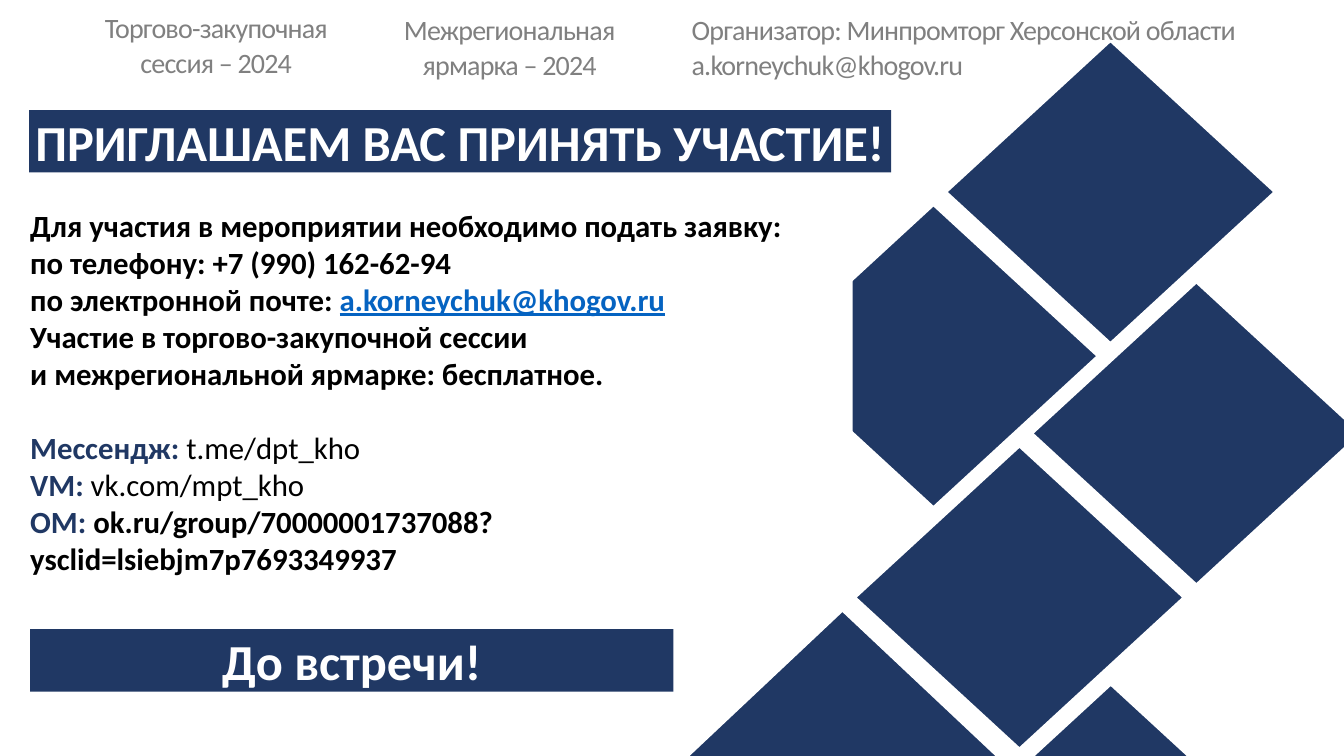
from lxml import etree
from pptx import Presentation
from pptx.dml.color import RGBColor
from pptx.enum.shapes import MSO_SHAPE
from pptx.enum.text import MSO_ANCHOR, MSO_AUTO_SIZE, PP_ALIGN
from pptx.oxml.ns import qn
from pptx.util import Pt

NAVY = RGBColor(0x20, 0x38, 0x64)
WHITE = RGBColor(0xFF, 0xFF, 0xFF)
BLACK = RGBColor(0, 0, 0)
GRAY = RGBColor(0x80, 0x80, 0x80)
LINK = RGBColor(0x05, 0x63, 0xC1)
LEFT, CENTER = PP_ALIGN.LEFT, PP_ALIGN.CENTER
TOP, NO_FIT = MSO_ANCHOR.TOP, MSO_AUTO_SIZE.NONE
RECT = MSO_SHAPE.RECTANGLE
FONT = "Calibri"

# Content
TITLE = "ПРИГЛАШАЕМ ВАС ПРИНЯТЬ УЧАСТИЕ!"
FAREWELL = "До встречи!"
HEADERS = [  # left, top, width, alignment, lines
    (66.2, 4, 176.4, CENTER, ["Торгово-закупочная", "сессия – 2024"]),
    (275.8, 5.3, 176.4, CENTER, ["Межрегиональная", "ярмарка – 2024"]),
    (487, 5.3, 408.2, LEFT,
     ["Организатор: Минпромторг Херсонской области", "a.korneychuk@khogov.ru"]),
]
# Each paragraph: space before, runs of (text, colour, bold, underline)
BODY = [
    (0, [("Для участия в мероприятии необходимо подать заявку:", BLACK, True, False)]),
    (0, [("по телефону: +7 (990) 162-62-94", BLACK, True, False)]),
    (0, [("по электронной почте: ", BLACK, True, False),
         ("a.korneychuk@khogov.ru", LINK, True, True)]),
    (0, [("Участие в торгово-закупочной сессии", BLACK, True, False)]),
    (0, [("и межрегиональной ярмарке: бесплатное.", BLACK, True, False)]),
    (26.5, [("Мессендж: ", NAVY, True, False), ("t.me/dpt_kho", BLACK, False, False)]),
    (0, [("VM: ", NAVY, True, False), ("vk.com/mpt_kho", BLACK, False, False)]),
    (0, [("OM: ", NAVY, True, False),
         ("ok.ru/group/70000001737088?ysclid=lsiebjm7p7693349937", BLACK, True, False)]),
]

# Diamond rows: centre of the first diamond, count; each next one is down-left
DIAMOND_ROWS = [(793.2, 137.2, 2), (854.6, 309.6, 3), (793.4, 596.9, 1)]
STEP_X, STEP_Y = -126.4, 117.2
HALF_W, HALF_H = 119, 109.5
CUT_Y = 546.5


def add_run(p, text, size, color, bold=False, underline=False):
    r = p.add_run()
    r.text = text
    r.font.name, r.font.size = FONT, Pt(size)
    r.font.bold, r.font.underline = bold, underline
    r.font.color.rgb = color
    return r


def set_frame(sp, left, top, width, height, fill):
    sp.left, sp.top, sp.width, sp.height = Pt(left), Pt(top), Pt(width), Pt(height)
    sp.fill.solid()
    sp.fill.fore_color.rgb = fill
    tf = sp.text_frame
    tf.word_wrap, tf.auto_size, tf.vertical_anchor = True, NO_FIT, TOP
    tf.margin_left = tf.margin_right = tf.margin_bottom = 0
    tf.margin_top = Pt(1)
    return tf


def add_banner(sp, left, top, width, text):
    tf = set_frame(sp, left, top, width, 44.6, NAVY)
    p = tf.paragraphs[0]
    p.alignment = CENTER
    add_run(p, text, 36, WHITE, bold=True)


def add_diamond(shapes, cx, cy):
    top = cy - HALF_H
    if cy + HALF_H > CUT_Y:  # only the upper part is on the slide
        depth = min(HALF_H, CUT_Y - top)
        half = HALF_W * depth / HALF_H
        points = [(cx, top), (cx + half, CUT_Y), (cx - half, CUT_Y)]
    else:
        points = [(cx, top), (cx + HALF_W, cy), (cx, cy + HALF_H), (cx - HALF_W, cy)]
    points = [(Pt(x), Pt(y)) for x, y in points]
    fb = shapes.build_freeform(*points[0])
    fb.add_line_segments(points[1:], close=True)
    sp = fb.convert_to_shape()
    sp.shadow.inherit = False
    sp.fill.solid()
    sp.fill.fore_color.rgb = NAVY
    sp.line.color.rgb = WHITE
    sp.line.width = Pt(3.92)


prs = Presentation()
prs.slide_width, prs.slide_height = Pt(960), Pt(540)
s = prs.slides.add_slide(prs.slide_layouts[1])
title, body = s.placeholders

# Diamonds, kept behind the text
for x, y, count in DIAMOND_ROWS:
    for i in range(count):
        add_diamond(s.shapes, x + i * STEP_X, y + i * STEP_Y)
for sp in (title, body):
    sp._element.getparent().append(sp._element)

# Title and farewell banners
add_banner(title, 20.9, 78.6, 615.6, TITLE)
farewell = s.shapes.add_shape(RECT, 0, 0, 0, 0)
farewell.shadow.inherit = False
farewell.line.fill.background()
add_banner(farewell, 21.6, 449.4, 459.4, FAREWELL)

# Body text
tf = set_frame(body, 21.6, 146.9, 587.5, 267.8, WHITE)
for i, (before, runs) in enumerate(BODY):
    p = tf.add_paragraph() if i else tf.paragraphs[0]
    pPr = p._p.get_or_add_pPr()
    pPr.set("marL", "0")
    pPr.set("indent", "0")
    etree.SubElement(pPr, qn("a:buNone"))
    p.alignment, p.line_spacing = LEFT, 1.0
    p.space_before = Pt(before)
    for text, color, bold, underline in runs:
        add_run(p, text, 22, color, bold, underline)

# Header captions
for left, top, width, align, lines in HEADERS:
    tf = s.shapes.add_textbox(Pt(left), Pt(top), Pt(width), Pt(56.9)).text_frame
    tf.word_wrap = True
    for i, line in enumerate(lines):
        p = tf.add_paragraph() if i else tf.paragraphs[0]
        p.alignment = align
        p.space_before = Pt(1 if i else 0)
        r = add_run(p, line, 20, GRAY)
        r._r.get_or_add_rPr().set("spc", "-60")

prs.save("out.pptx")
